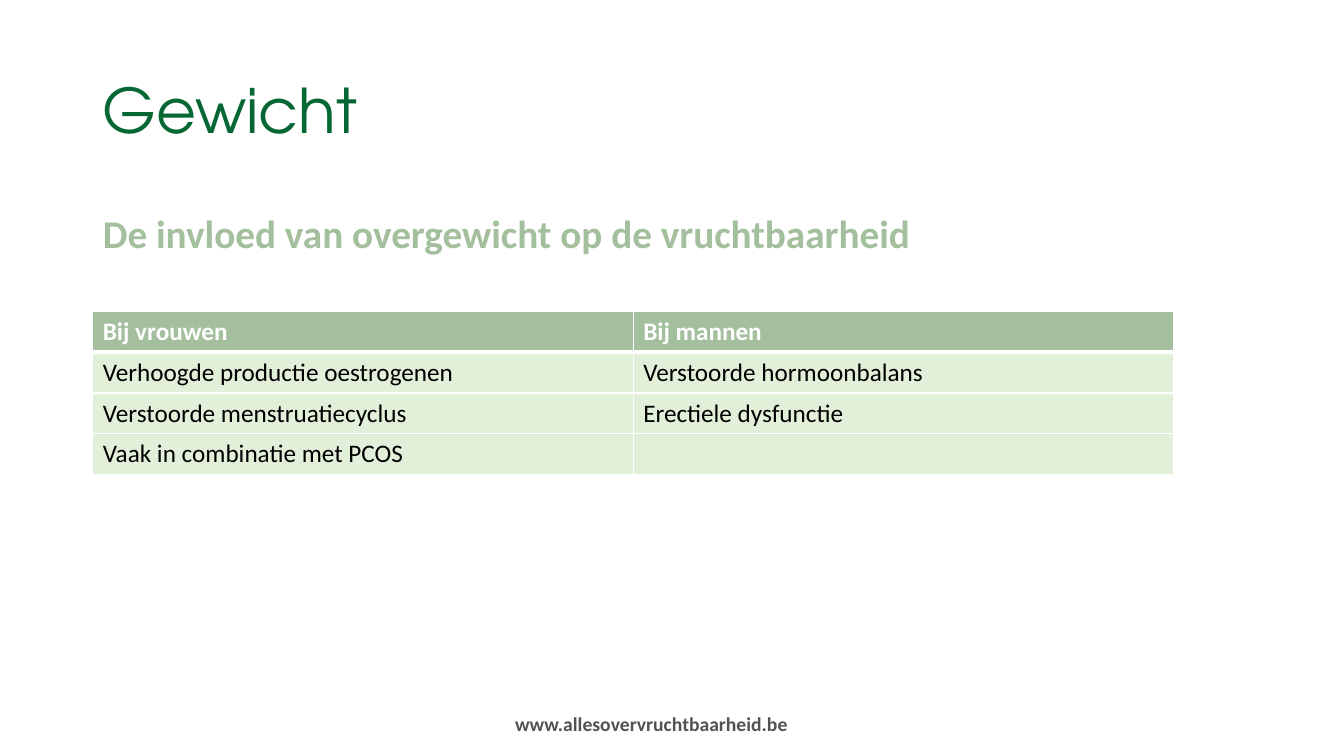
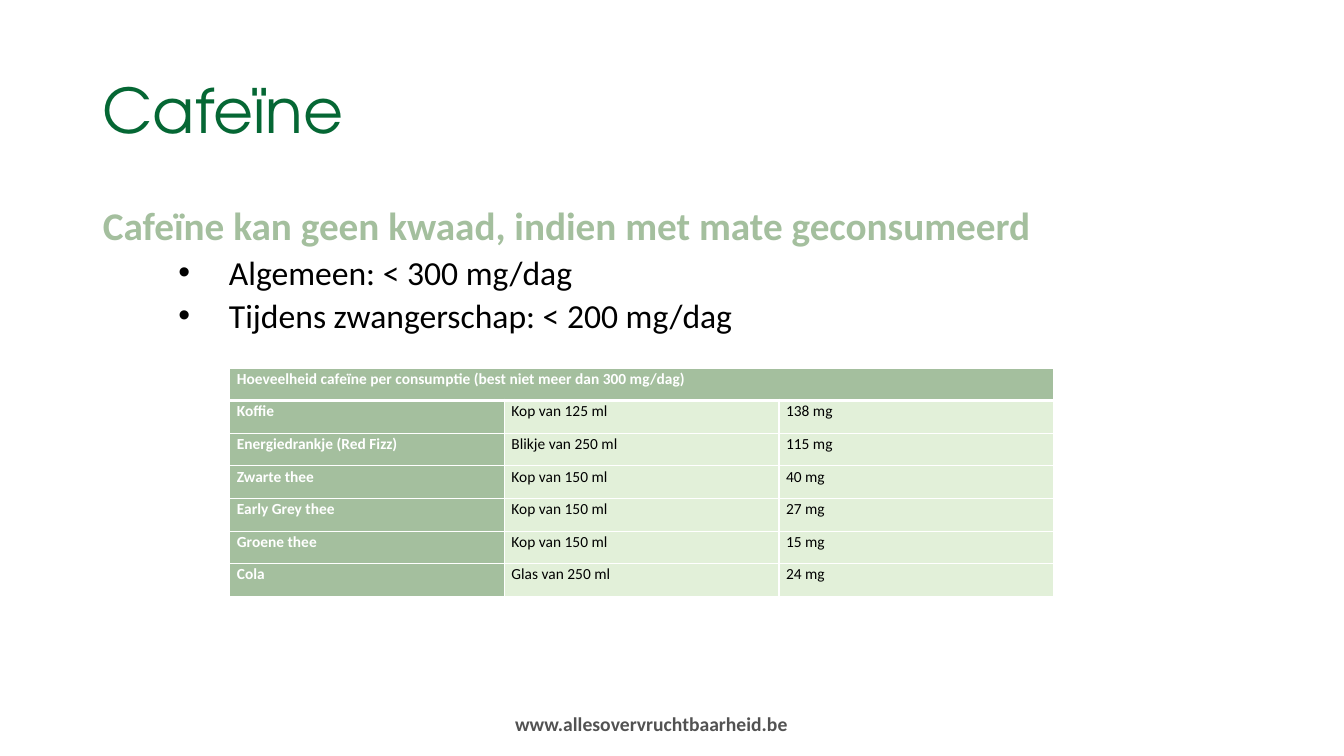
import pptx
import pptx.util
import pptx.dml.color
import pptx.enum.text
import pptx.oxml.ns
from lxml import etree

Inches, Pt = pptx.util.Inches, pptx.util.Pt
RGBColor = pptx.dml.color.RGBColor
PP_ALIGN = pptx.enum.text.PP_ALIGN
qn = pptx.oxml.ns.qn

DARK_GREEN = RGBColor(0x05, 0x67, 0x34)
SAGE = RGBColor(0xA4, 0xBF, 0x9E)
PALE_GREEN = RGBColor(0xE2, 0xF0, 0xD9)
GREY = RGBColor(0x52, 0x52, 0x52)
BLACK = RGBColor(0, 0, 0)
WHITE = RGBColor(0xFF, 0xFF, 0xFF)

TITLE_FONT, TEXT_FONT = "TeX Gyre Adventor", "Calibri"
SLIDE_WIDTH, SLIDE_HEIGHT = 13.33, 7.5
MARGIN = 0.92
CONTENT_WIDTH = 11.5
TITLE_BOX = (MARGIN, 0.4, CONTENT_WIDTH, 1.45)
FOOTER_BOX = (5.01, 7.01, 3, 0.34)
BODY_HEIGHT = 4.76
WEBSITE = "www.allesovervruchtbaarheid.be"

WEIGHT_ROWS = [
    ("Bij vrouwen", "Bij mannen"),
    ("Verhoogde productie oestrogenen", "Verstoorde hormoonbalans"),
    ("Verstoorde menstruatiecyclus", "Erectiele dysfunctie"),
    ("Vaak in combinatie met PCOS", ""),
]
CAFFEINE_ROWS = [
    ("Hoeveelheid cafeïne per consumptie (best niet meer dan 300 mg/dag)", "", ""),
    ("Koffie", "Kop van 125 ml", "138 mg"),
    ("Energiedrankje (Red Fizz)", "Blikje van 250 ml", "115 mg"),
    ("Zwarte thee", "Kop van 150 ml", "40 mg"),
    ("Early Grey thee", "Kop van 150 ml", "27 mg"),
    ("Groene thee", "Kop van 150 ml", "15 mg"),
    ("Cola", "Glas van 250 ml", "24 mg"),
]


def place(shape, box):
    shape.left, shape.top, shape.width, shape.height = map(Inches, box)


def format_runs(paragraph, size, color, bold=False, font=TEXT_FONT):
    for run in paragraph.runs:
        run.font.size = Pt(size)
        run.font.name = font
        run.font.bold = bold
        run.font.color.rgb = color


def set_bullet(paragraph, char=None, margin=0, hanging=0):
    properties = paragraph._p.get_or_add_pPr()
    properties.set("marL", str(Inches(margin)))
    properties.set("indent", str(-Inches(hanging)))
    if char:
        etree.SubElement(properties, qn("a:buFont"), typeface="Arial")
        etree.SubElement(properties, qn("a:buChar"), char=char)
    else:
        etree.SubElement(properties, qn("a:buNone"))


def add_title(slide, text):
    title = slide.shapes.title
    place(title, TITLE_BOX)
    frame = title.text_frame
    frame.text = text
    frame.auto_size = pptx.enum.text.MSO_AUTO_SIZE.NONE
    frame.vertical_anchor = pptx.enum.text.MSO_ANCHOR.MIDDLE
    heading = frame.paragraphs[0]
    heading.alignment = PP_ALIGN.LEFT
    heading.line_spacing = 0.9
    format_runs(heading, 44, DARK_GREEN, font=TITLE_FONT)


def add_body(slide, top, statement, points):
    """Fill the body placeholder with a bold statement and bulleted points."""
    body = slide.placeholders[1]
    place(body, (MARGIN, top, CONTENT_WIDTH, BODY_HEIGHT))
    frame = body.text_frame
    frame.text = "\n".join([statement, *points])
    frame.auto_size = pptx.enum.text.MSO_AUTO_SIZE.NONE
    lead, *bullets = frame.paragraphs
    set_bullet(lead)
    lead.line_spacing = 0.9
    lead.space_before = Pt(0)
    format_runs(lead, 28, SAGE, bold=True)
    for bullet in bullets:
        bullet.level = 1
        set_bullet(bullet, "•", margin=1.25, hanging=0.5)
        bullet.line_spacing = 0.9
        bullet.space_before = Pt(5)
        format_runs(bullet, 24, BLACK)


def add_footer(slide):
    footer = slide.shapes.add_textbox(*map(Inches, FOOTER_BOX))
    footer.text_frame.word_wrap = True
    footer.text_frame.text = WEBSITE
    format_runs(footer.text_frame.paragraphs[0], 14, GREY, bold=True)


def set_borders(cell, top, bottom):
    """Draw white borders; top and bottom are widths in points."""
    properties = cell._tc.get_or_add_tcPr()
    for side, width in (("L", 1), ("R", 1), ("T", top), ("B", bottom)):
        line = etree.SubElement(properties, qn(f"a:ln{side}"), w=str(Pt(width)))
        fill = etree.SubElement(line, qn("a:solidFill"))
        etree.SubElement(fill, qn("a:srgbClr"), val=str(WHITE))


def add_green_table(slide, box, rows, size, header_column=False, compact=False):
    table = slide.shapes.add_table(len(rows), len(rows[0]), *map(Inches, box)).table
    for r, texts in enumerate(rows):
        for c, text in enumerate(texts):
            cell = table.cell(r, c)
            is_header = r == 0 or (header_column and c == 0)
            set_borders(cell, top=3 if r == 1 else 1, bottom=3 if r == 0 else 1)
            cell.fill.solid()
            cell.fill.fore_color.rgb = SAGE if is_header else PALE_GREEN
            cell.text_frame.text = text
            paragraph = cell.text_frame.paragraphs[0]
            if compact:
                cell.margin_left = cell.margin_right = Inches(0.07)
                cell.margin_top = cell.margin_bottom = 0
                paragraph.alignment = PP_ALIGN.JUSTIFY
                paragraph.line_spacing = 1.07
                paragraph.space_after = Pt(8)
            format_runs(paragraph, size, WHITE if is_header else BLACK, bold=is_header)
    return table


def add_topic_slide(prs, title, body_top, statement, points=()):
    slide = prs.slides.add_slide(prs.slide_layouts[1])
    add_footer(slide)
    add_title(slide, title)
    add_body(slide, body_top, statement, points)
    return slide


def add_weight_slide(prs):
    slide = add_topic_slide(prs, "Gewicht", 2.08,
                            "De invloed van overgewicht op de vruchtbaarheid")
    add_green_table(slide, (MARGIN, 3.09, 10.72, 1.62), WEIGHT_ROWS, size=18)


def add_caffeine_slide(prs):
    slide = add_topic_slide(prs, "Cafeïne", 2,
                            "Cafeïne kan geen kwaad, indien met mate geconsumeerd",
                            ["Algemeen: < 300 mg/dag",
                             "Tijdens zwangerschap: < 200 mg/dag"])
    table = add_green_table(slide, (2.28, 3.65, 8.17, 2.27), CAFFEINE_ROWS, size=11,
                            header_column=True, compact=True)
    table.cell(0, 0).merge(table.cell(0, 2))


def main():
    prs = pptx.Presentation()
    prs.slide_width, prs.slide_height = Inches(SLIDE_WIDTH), Inches(SLIDE_HEIGHT)
    add_weight_slide(prs)
    add_caffeine_slide(prs)
    prs.save("out.pptx")


if __name__ == "__main__":
    main()
